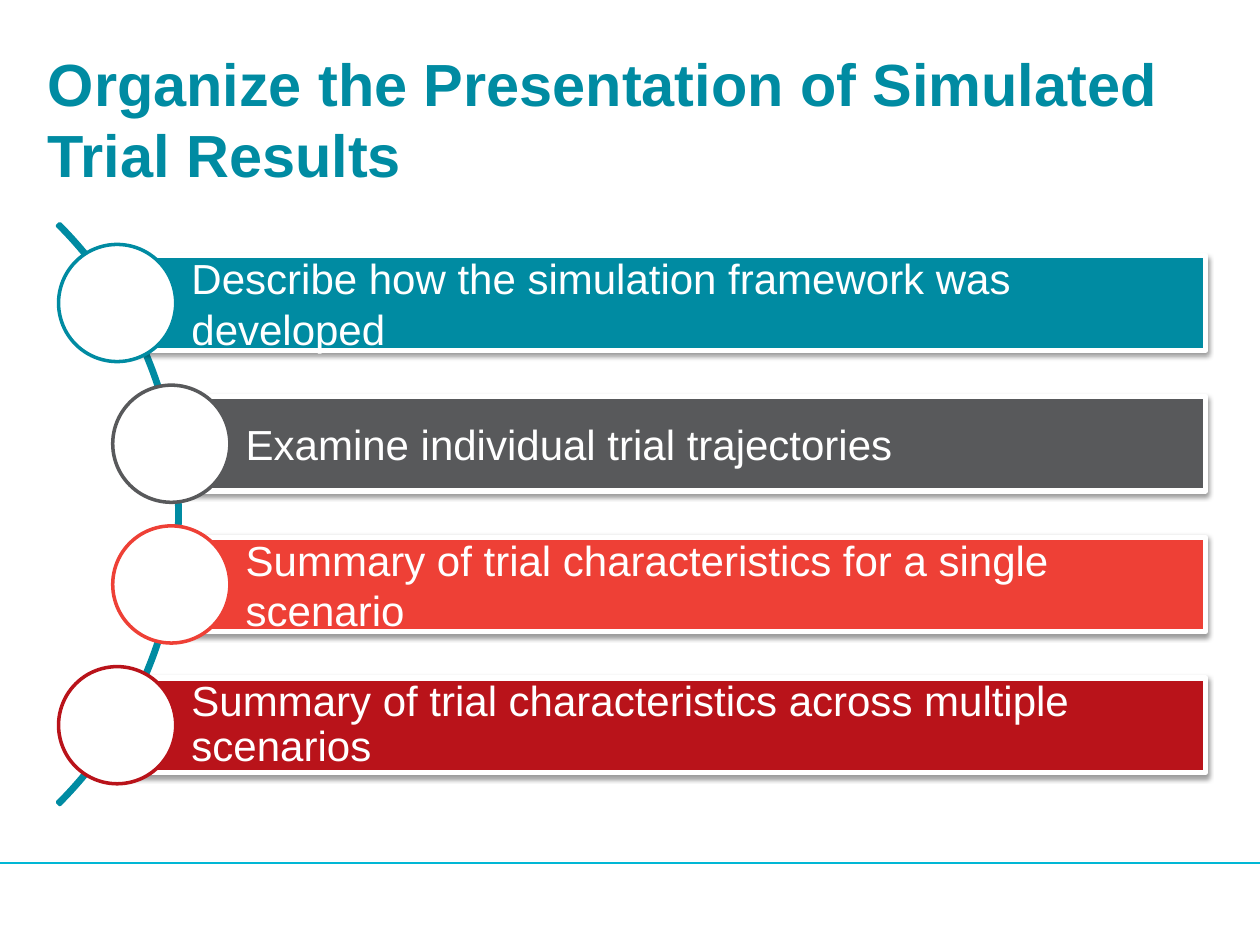
"""Build a slide with four coloured bars strung along an arc."""
from dataclasses import dataclass

from lxml.etree import SubElement
from pptx import Presentation
from pptx.dml.color import RGBColor
from pptx.enum.shapes import MSO_CONNECTOR, MSO_SHAPE
from pptx.enum.text import MSO_ANCHOR, MSO_AUTO_SIZE, PP_ALIGN
from pptx.oxml.ns import qn
from pptx.util import Inches, Pt

TEAL, WHITE = "008BA2", "FFFFFF"
FIRST_TOP, PITCH = 2.03, 1.117
BAR_RIGHT, BAR_HEIGHT, CIRCLE = 9.57, 0.75, 0.93


@dataclass
class Step:
    text: str
    color: str
    left: float
    spacing: float = 1.0


STEPS = [
    Step("Describe how the simulation framework was developed", TEAL, 0.93),
    Step("Examine individual trial trajectories", "58595B", 1.36),
    Step("Summary of trial characteristics for a single scenario", "EE4036", 1.36),
    Step("Summary of trial characteristics across multiple scenarios", "B9131A", 0.93, 0.9),
]


def rgb(value: str) -> RGBColor:
    return RGBColor.from_string(value)


def add_figure(page, kind, left: float, top: float, width: float, height: float,
               fill: str | None, line: str | None, weight: float = 0):
    figure = page.shapes.add_shape(kind, Inches(left), Inches(top), Inches(width), Inches(height))
    figure.shadow.inherit = False
    if fill:
        figure.fill.solid()
        figure.fill.fore_color.rgb = rgb(fill)
    else:
        figure.fill.background()
    if line:
        figure.line.color.rgb = rgb(line)
        figure.line.width = Pt(weight)
    else:
        figure.line.fill.background()
    return figure


def add_shadow(figure, opacity: int, distance: float) -> None:
    effects = figure._element.spPr.find(qn("a:effectLst"))
    shadow = SubElement(effects, qn("a:outerShdw"), blurRad=str(Pt(3.1)), dist=str(Pt(distance)),
                        dir="5400000", rotWithShape="0")
    color = SubElement(shadow, qn("a:srgbClr"), val="000000")
    SubElement(color, qn("a:alpha"), val=str(opacity * 1000))


def write_text(shape, text: str, size: float, color: str, bold: bool,
               margins: tuple[float, ...], spacing: float = 1.0) -> None:
    frame = shape.text_frame
    sides = ("margin_left", "margin_top", "margin_right", "margin_bottom")
    frame_format = {"word_wrap": True, "auto_size": MSO_AUTO_SIZE.NONE,
                    "vertical_anchor": MSO_ANCHOR.MIDDLE,
                    **{side: Inches(margin) for side, margin in zip(sides, margins)}}
    for name, value in frame_format.items():
        setattr(frame, name, value)
    para = frame.paragraphs[0]
    para.alignment = PP_ALIGN.LEFT
    para.line_spacing = spacing
    span = para.add_run()
    span.text = text
    for name, value in {"name": "Arial", "size": Pt(size), "bold": bold}.items():
        setattr(span.font, name, value)
    span.font.color.rgb = rgb(color)


def add_footer(page) -> None:
    band = add_figure(page, MSO_SHAPE.RECTANGLE, 0, 6.83, 10, 0.67, WHITE, None)
    add_shadow(band, 35, 1.8)
    rule = page.shapes.add_connector(MSO_CONNECTOR.STRAIGHT, 0, Inches(6.85), Inches(10), Inches(6.85))
    rule.line.color.rgb = rgb("00B7D5")
    rule.line.width = Pt(0.75)
    SubElement(rule._element.spPr, qn("a:effectLst"))


def add_title(page) -> None:
    title = page.shapes.title
    place = {"left": 0.38, "top": 0.52, "width": 9.25, "height": 0.84}
    for name, value in place.items():
        setattr(title, name, Inches(value))
    write_text(title, "Organize the Presentation of Simulated Trial Results", 34, TEAL, True, (0, 0, 0, 0))


def add_arc(page) -> None:
    arc = add_figure(page, MSO_SHAPE.BLOCK_ARC, -5.09, 0.82, 6.52, 6.52, None, TEAL, 2)
    for index, value in enumerate((189, 27, 0.004)):
        arc.adjustments[index] = value


def add_step(page, step: Step, top: float) -> None:
    bar = add_figure(page, MSO_SHAPE.RECTANGLE, step.left, top, BAR_RIGHT - step.left, BAR_HEIGHT,
                     step.color, WHITE, 3)
    add_shadow(bar, 38, 1.6)
    write_text(bar, step.text, 24, WHITE, False, (0.59, 0.07, 0.07, 0.07), step.spacing)
    add_figure(page, MSO_SHAPE.OVAL, step.left - CIRCLE / 2, top + (BAR_HEIGHT - CIRCLE) / 2,
               CIRCLE, CIRCLE, WHITE, step.color, 2)


def main() -> None:
    deck = Presentation()
    deck.slide_width, deck.slide_height = Inches(10), Inches(7.5)
    page = deck.slides.add_slide(deck.slide_layouts[5])
    add_footer(page)
    add_title(page)
    add_arc(page)
    for index, step in enumerate(STEPS):
        add_step(page, step, FIRST_TOP + index * PITCH)
    deck.save("out.pptx")


if __name__ == "__main__":
    main()
